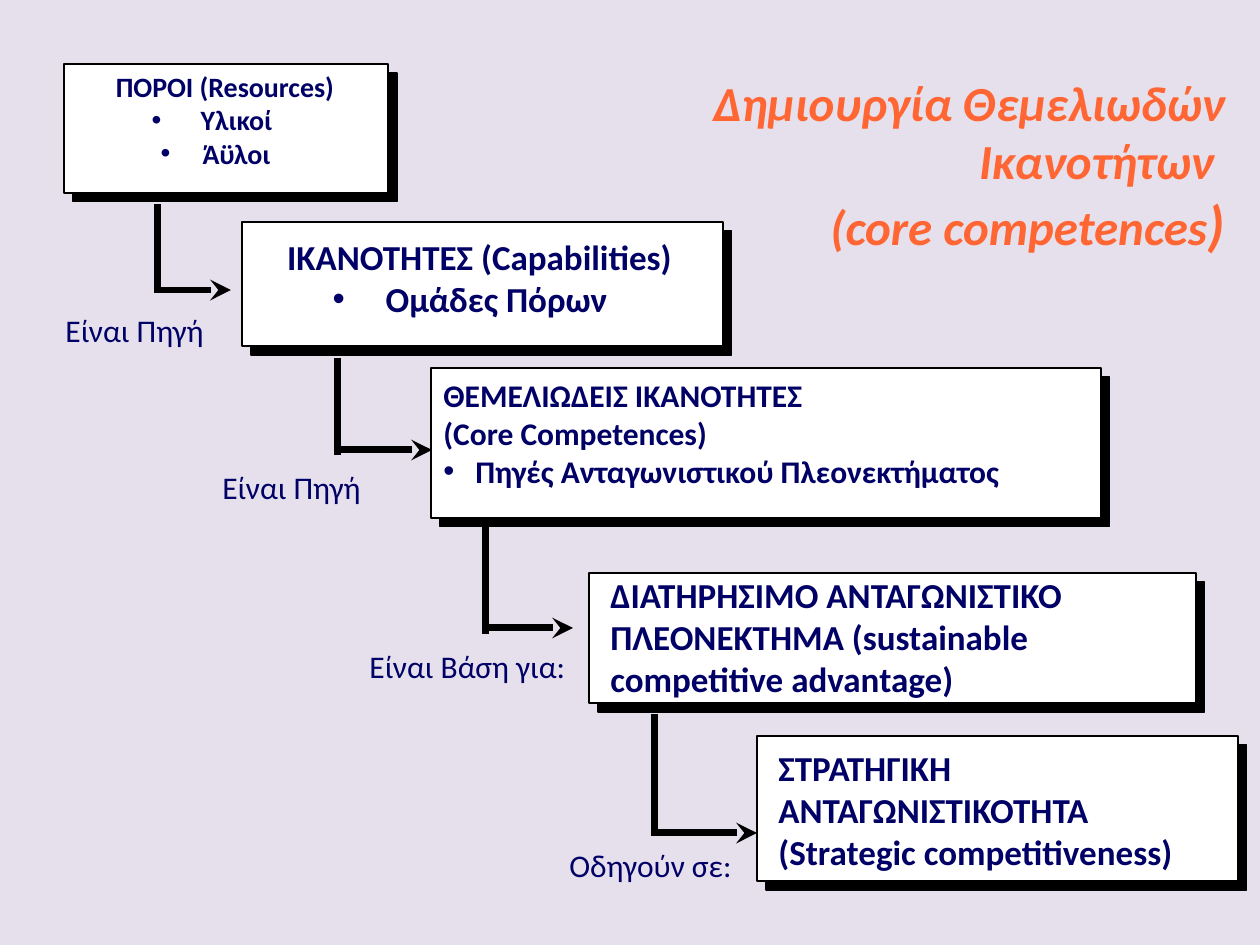
from lxml import etree
from pptx import Presentation
from pptx.dml.color import RGBColor
from pptx.enum.shapes import MSO_CONNECTOR, MSO_SHAPE
from pptx.enum.text import MSO_ANCHOR, PP_ALIGN
from pptx.oxml.ns import qn
from pptx.util import Inches, Pt

PX_PER_INCH = 126
BACKGROUND = RGBColor(0xE6, 0xE0, 0xEC)
WHITE = RGBColor(0xFF, 0xFF, 0xFF)
BLACK = RGBColor(0, 0, 0)
NAVY = RGBColor(0, 0, 0x66)
ORANGE = RGBColor(0xFF, 0x66, 0x33)
LEFT, CENTER, RIGHT = PP_ALIGN.LEFT, PP_ALIGN.CENTER, PP_ALIGN.RIGHT
TOP, MIDDLE = MSO_ANCHOR.TOP, MSO_ANCHOR.MIDDLE
RECTANGLE, STRAIGHT = MSO_SHAPE.RECTANGLE, MSO_CONNECTOR.STRAIGHT


def emu(px):
    return round(px * Inches(1) / PX_PER_INCH)


class StairDiagram:
    font_name = "Calibri"

    def __init__(self, slide):
        self.slide = slide
        slide.background.fill.solid()
        slide.background.fill.fore_color.rgb = BACKGROUND

    def box(self, *bounds):
        """White rectangle with a solid offset shadow."""
        shape = self.slide.shapes.add_shape(RECTANGLE, *map(emu, bounds))
        shape.fill.solid()
        shape.fill.fore_color.rgb = WHITE
        shape.line.color.rgb = BLACK
        shape.line.width = Pt(1)
        shape.shadow.inherit = False
        effects = shape._element.spPr.find(qn("a:effectLst"))
        shadow = etree.SubElement(effects, qn("a:outerShdw"), dist=str(Pt(7.1)),
                                  dir="2700000", algn="ctr", rotWithShape="0")
        etree.SubElement(shadow, qn("a:srgbClr"), val=str(BLACK))

    def line(self, start, end, arrow=False):
        connector = self.slide.shapes.add_connector(
            STRAIGHT, *map(emu, start + end))
        connector.line.color.rgb = BLACK
        connector.line.width = Pt(4)
        if arrow:
            etree.SubElement(connector.line._get_or_add_ln(),
                             qn("a:tailEnd"), type="stealth")
        etree.SubElement(connector._element.spPr, qn("a:effectLst"))

    def elbow(self, x, top, bottom, corner, tip):
        """Downward line, then an arrow to the right from the corner (x, y)."""
        self.line((x, top), (x, bottom))
        self.line(corner, (tip, corner[1]), arrow=True)

    def text(self, bounds, paragraphs, size, color=NAVY, bold=False,
             italic=False, align=LEFT, anchor=TOP):
        """Each paragraph is a list of (text, size) runs, a plain string,
        or a (string, hanging, right margin) bullet."""
        frame = self.slide.shapes.add_textbox(*map(emu, bounds)).text_frame
        frame.word_wrap = True
        frame.vertical_anchor = anchor
        for index, content in enumerate(paragraphs):
            paragraph = frame.paragraphs[0] if index == 0 else frame.add_paragraph()
            paragraph.alignment = align
            if isinstance(content, tuple):
                content, hanging, right_margin = content
                self.bullet(paragraph, hanging, right_margin)
            if isinstance(content, str):
                content = [(content, size)]
            for words, run_size in content:
                run = paragraph.add_run()
                run.text = words
                font = run.font
                font.name, font.size = self.font_name, Pt(run_size)
                font.bold, font.italic = bold, italic
                font.color.rgb = color

    def bullet(self, paragraph, hanging, right_margin):
        properties = paragraph._p.get_or_add_pPr()
        properties.set("marL", str(emu(hanging)))
        properties.set("indent", str(-emu(hanging)))
        properties.set("marR", str(emu(right_margin)))
        etree.SubElement(properties, qn("a:buFont"), typeface="Arial")
        etree.SubElement(properties, qn("a:buChar"), char="•")


def main():
    presentation = Presentation()
    presentation.slide_width, presentation.slide_height = Inches(10), Inches(7.5)
    diagram = StairDiagram(
        presentation.slides.add_slide(presentation.slide_layouts[6]))

    for bounds in ((64, 64, 324, 129), (242, 222, 481, 124),
                   (431, 368, 670, 150), (589, 573, 607, 130),
                   (757, 736, 481, 145)):
        diagram.box(*bounds)

    for elbow in ((158, 204, 293, (156, 290), 231),
                  (338, 358, 455, (336, 450), 432),
                  (486, 525, 634, (484, 628), 573),
                  (655, 714, 833, (651, 833), 757)):
        diagram.elbow(*elbow)

    steps = (
        ((52, 63, 346, 115), 16, CENTER,
         ["ΠΟΡΟΙ (Resources)", ("Υλικοί", 49, 26), ("Άϋλοι", 42, 19)]),
        ((242, 229, 475, 97), 20, CENTER,
         ["ΙΚΑΝΟΤΗΤΕΣ (Capabilities)", ("Ομάδες Πόρων", 53, 19)]),
        ((431, 370, 672, 127), 18, LEFT,
         ["ΘΕΜΕΛΙΩΔΕΙΣ ΙΚΑΝΟΤΗΤΕΣ", "(Core Competences)",
          ("Πηγές Ανταγωνιστικού Πλεονεκτήματος", 32, 0)]),
        ((598, 567, 620, 139), 20, LEFT,
         ["ΔΙΑΤΗΡΗΣΙΜΟ ΑΝΤΑΓΩΝΙΣΤΙΚΟ ΠΛΕΟΝΕΚΤΗΜΑ "
          "(sustainable competitive advantage)"]),
        ((766, 740, 483, 139), 20, LEFT,
         ["ΣΤΡΑΤΗΓΙΚΗ", "ΑΝΤΑΓΩΝΙΣΤΙΚΟΤΗΤΑ", "(Strategic competitiveness)"]),
    )
    for bounds, size, align, paragraphs in steps:
        diagram.text(bounds, paragraphs, size, bold=True, align=align)

    diagram.text((514, 120, 723, 89),
                 ["Δημιουργία Θεμελιωδών Ικανοτήτων ",
                  [("(core competences", 28), (")", 32)]],
                 28, ORANGE, bold=True, italic=True, align=RIGHT, anchor=MIDDLE)

    for left, top, width, label in ((53, 305, 273, "Είναι Πηγή"),
                                    (210, 462, 179, "Είναι Πηγή"),
                                    (357, 641, 231, "Είναι Βάση για:"),
                                    (557, 840, 210, "Οδηγούν σε:")):
        diagram.text((left, top, width, 50), [label], 18)

    presentation.save("out.pptx")


if __name__ == "__main__":
    main()
